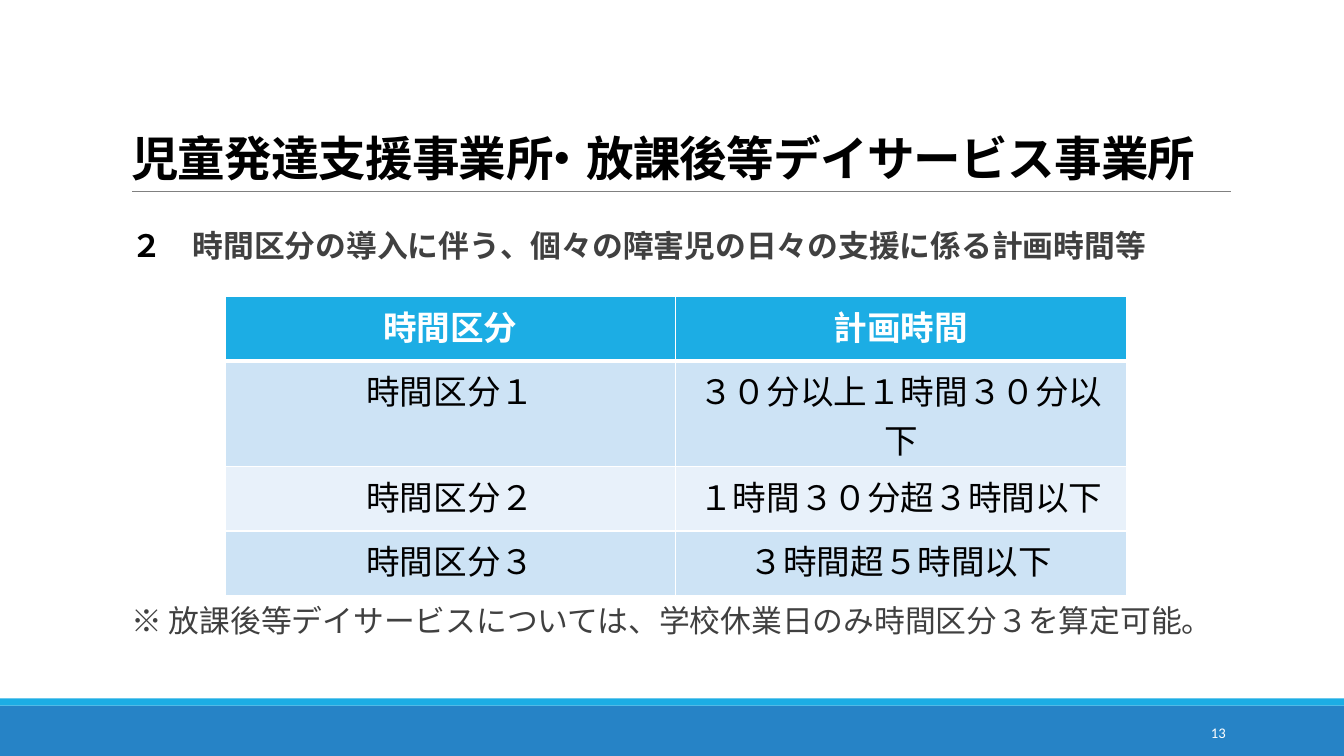
import pptx
import pptx.util
import pptx.dml.color
import pptx.enum.shapes
import pptx.enum.text
import pptx.oxml.ns
from dataclasses import dataclass
from lxml import etree

TITLE = [("児童発達支援事業", -50), ("所・", -1090), ("放課後等デイサービス事業所", -50)]
HEADING = [("２　", "000000"),
           ("時間区分の導入に伴う、個々の障害児の日々の支援に係る計画時間等", "404040")]
NOTE = [("※ 放課後等デイサービスについては、学校休業日のみ時間区分３を算定可能。", "404040")]
TIME_ROWS = [
    ("時間区分", "計画時間"),
    ("時間区分１", "３０分以上１時間３０分以下"),
    ("時間区分２", "１時間３０分超３時間以下"),
    ("時間区分３", "３時間超５時間以下"),
]
ROW_HEIGHTS = [1.62, 2.67, 1.62, 1.62]
PAGE_NUMBER = [("13", "FFFFFF")]


@dataclass(frozen=True)
class Theme:
    latin: str = "Calibri"
    japanese: str = "Noto Sans CJK JP"
    black: str = "000000"
    white: str = "FFFFFF"
    rule: str = "808080"
    accent: str = "1CADE4"
    footer: str = "2683C6"
    bands: tuple = ("CDE3F5", "E8F1FA")
    title_size: float = 34
    body_size: float = 22
    table_size: float = 24
    number_size: float = 10.5


theme = Theme()
Cm = pptx.util.Cm
Pt = pptx.util.Pt
qn = pptx.oxml.ns.qn
ALIGN = pptx.enum.text.PP_ALIGN
ANCHOR = pptx.enum.text.MSO_ANCHOR


def rgb(color):
    return pptx.dml.color.RGBColor.from_string(color)


def format_span(span, size, color, bold=False, latin=theme.latin):
    span.font.size = Pt(size)
    span.font.bold = bold
    span.font.name = latin
    span.font.color.rgb = rgb(color)
    east_asian = etree.Element(qn("a:ea"), typeface=theme.japanese)
    span.font._element.find(qn("a:latin")).addnext(east_asian)


def add_band(page, top, height, color):
    band = page.shapes.add_shape(pptx.enum.shapes.MSO_SHAPE.RECTANGLE,
                                 0, Cm(top), deck.slide_width, Cm(height))
    band.shadow.inherit = False
    band.fill.solid()
    band.fill.fore_color.rgb = rgb(color)
    band.line.fill.background()


def add_text(page, spans, left, top, width, height, size, bold=False,
             align=ALIGN.LEFT, latin=theme.japanese, margin=0):
    box = page.shapes.add_textbox(Cm(left), Cm(top), Cm(width), Cm(height))
    frame = box.text_frame
    frame.word_wrap = True
    frame.vertical_anchor = ANCHOR.MIDDLE
    frame.margin_left = frame.margin_right = Cm(margin)
    para = frame.paragraphs[0]
    para.alignment = align
    for words, color in spans:
        span = para.add_run()
        span.text = words
        format_span(span, size, color, bold, latin)


def set_borders(cell, widths):
    properties = cell._tc.get_or_add_tcPr()
    for position, (side, width) in enumerate(widths.items()):
        border = etree.Element(qn("a:ln" + side), w=str(Pt(width)))
        fill = etree.SubElement(border, qn("a:solidFill"))
        etree.SubElement(fill, qn("a:srgbClr"), val=theme.white)
        properties.insert(position, border)


def add_time_table(page, left, top, width):
    table = page.shapes.add_table(len(TIME_ROWS), len(TIME_ROWS[0]), Cm(left), Cm(top),
                                  Cm(width), Cm(sum(ROW_HEIGHTS))).table
    for row, texts in enumerate(TIME_ROWS):
        table.rows[row].height = Cm(ROW_HEIGHTS[row])
        header = row == 0
        for column, words in enumerate(texts):
            cell = table.cell(row, column)
            cell.text_frame.text = words
            para = cell.text_frame.paragraphs[0]
            para.alignment = ALIGN.CENTER
            format_span(para.runs[0], theme.table_size,
                        theme.white if header else theme.black, header)
            cell.fill.solid()
            cell.fill.fore_color.rgb = rgb(theme.accent if header else theme.bands[(row - 1) % 2])
            set_borders(cell, {"L": 1, "R": 1, "T": 3 if row == 1 else 1, "B": 3 if header else 1})


def add_title(page):
    title = page.shapes.title
    title.left, title.top, title.width, title.height = Cm(3.05), Cm(0.79), Cm(27.94), Cm(4.04)
    frame = title.text_frame
    frame.word_wrap = True
    frame.auto_size = pptx.enum.text.MSO_AUTO_SIZE.NONE
    frame.vertical_anchor = ANCHOR.BOTTOM
    para = frame.paragraphs[0]
    para.alignment = ALIGN.LEFT
    para.line_spacing = 0.85
    for words, spacing in TITLE:
        span = para.add_run()
        span.text = words
        format_span(span, theme.title_size, theme.black, True)
        span.font._element.set("spc", str(spacing))


def add_title_rule(page):
    rule = page.shapes.add_connector(pptx.enum.shapes.MSO_CONNECTOR.STRAIGHT,
                                     Cm(3.33), Cm(4.83), Cm(31.01), Cm(4.83))
    rule.line.color.rgb = rgb(theme.rule)
    rule.line.width = Pt(0.5)
    etree.SubElement(rule._element.spPr, qn("a:effectLst"))


deck = pptx.Presentation()
deck.slide_width, deck.slide_height = Cm(33.87), Cm(19.05)
page = deck.slides.add_slide(deck.slide_layouts[5])

add_band(page, 17.78, 1.27, theme.footer)
add_band(page, 17.6, 0.18, theme.accent)
add_title_rule(page)
add_title(page)
add_text(page, HEADING, 3.31, 5.37, 27.66, 1.6, theme.body_size, bold=True)
add_text(page, NOTE, 3.31, 14.83, 27.66, 1.6, theme.body_size)
add_time_table(page, 5.67, 7.47, 22.71)
add_text(page, PAGE_NUMBER, 27.51, 17.95, 3.63, 1.02, theme.number_size,
         align=ALIGN.RIGHT, latin=theme.latin, margin=0.25)

deck.save("out.pptx")
